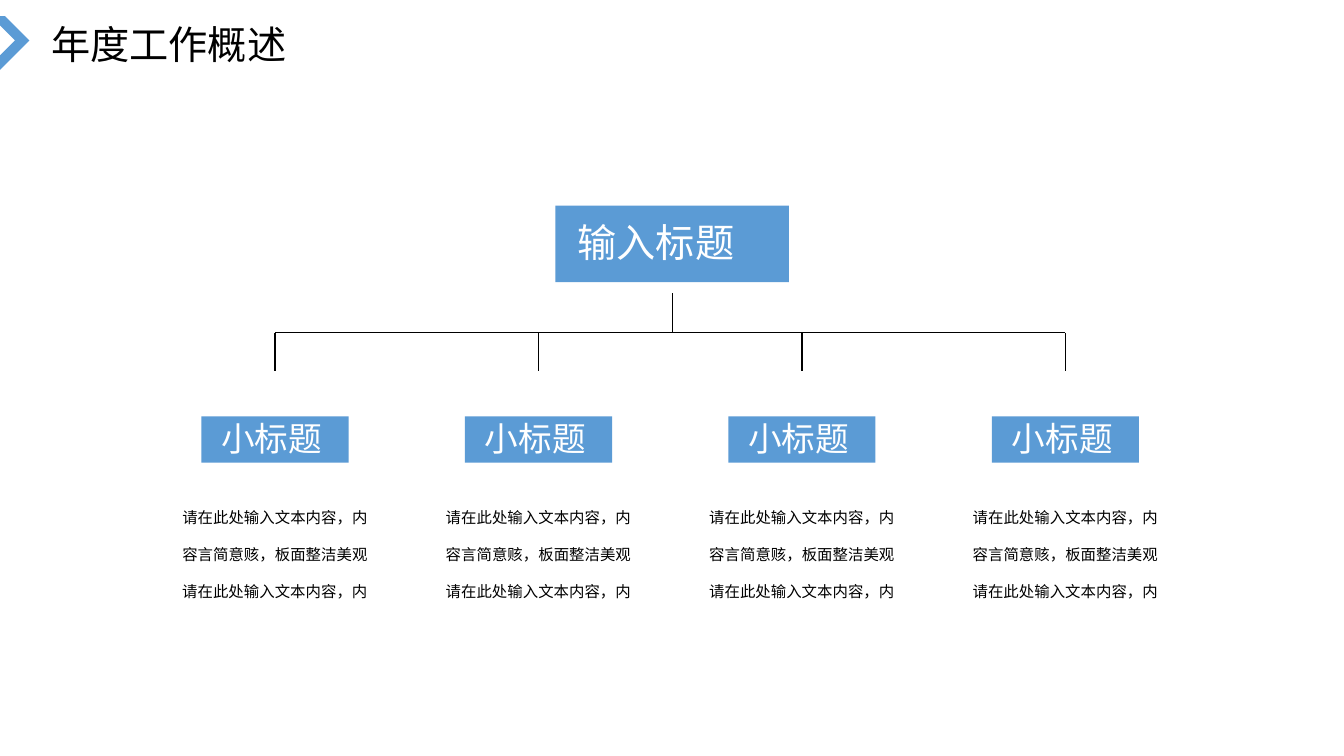
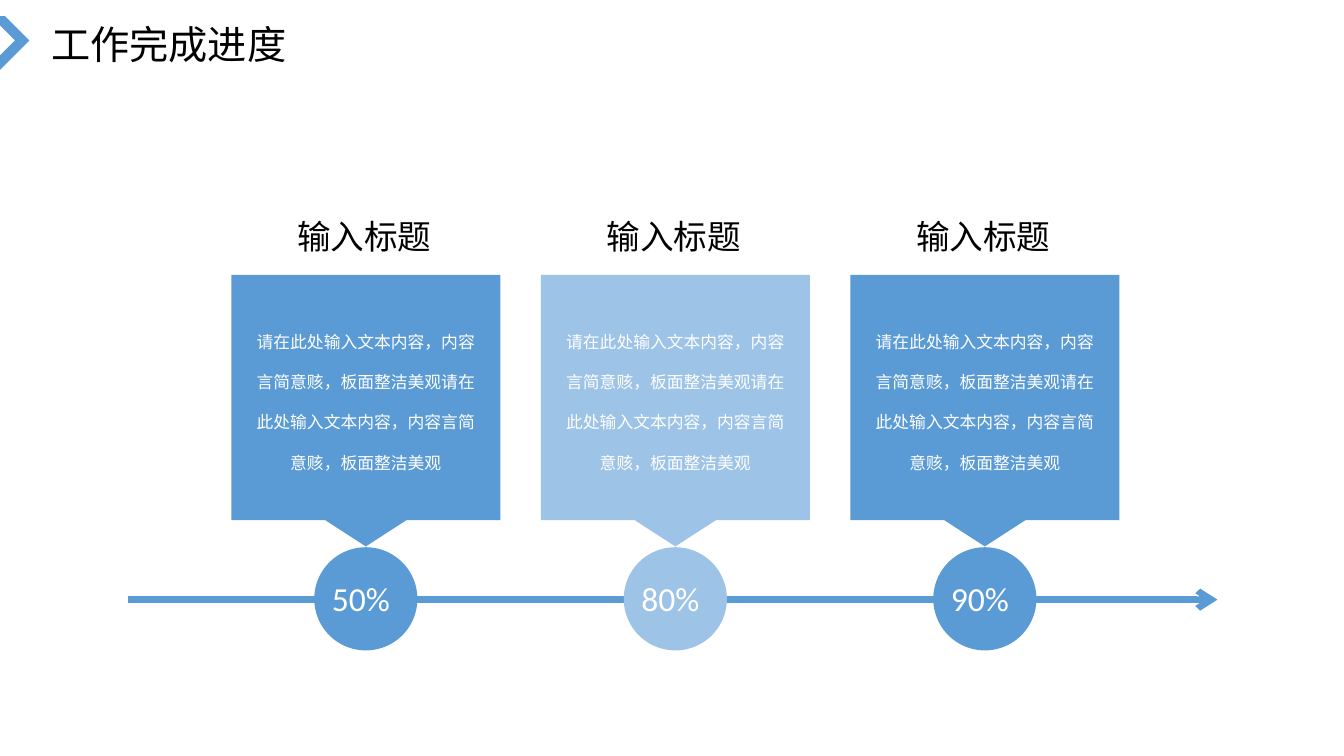
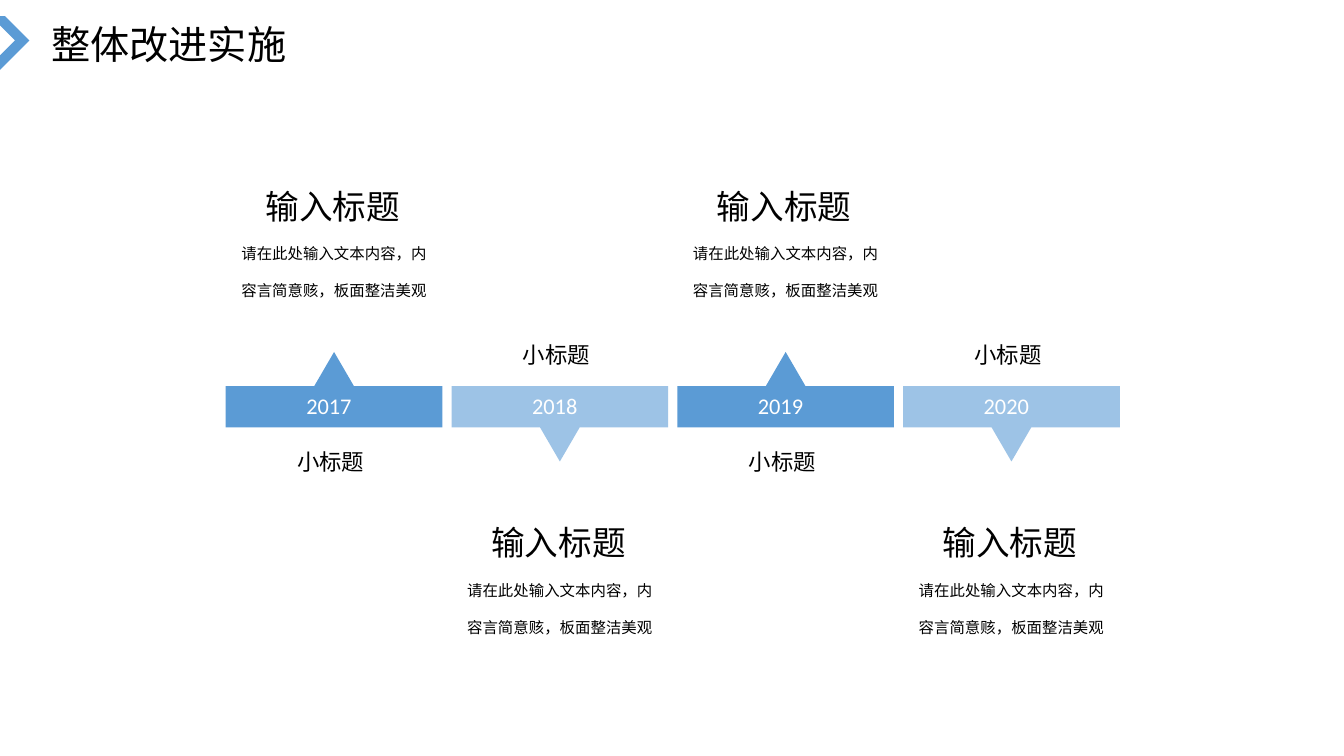
from dataclasses import dataclass

from pptx import Presentation, util as u
from pptx.dml.color import RGBColor
from pptx.enum import shapes, text
from pptx.oxml.ns import qn
from lxml import etree


@dataclass(frozen=True)
class Theme:
    font: str = "Calibri"
    blue: RGBColor = RGBColor(0x5B, 0x9B, 0xD5)
    pale: RGBColor = RGBColor(0x9D, 0xC3, 0xE6)
    ink: RGBColor = RGBColor(0, 0, 0)
    white: RGBColor = RGBColor(255, 255, 255)
    title: int = 28
    heading: int = 24
    label: int = 16
    body: int = 12
    small: int = 11


theme = Theme()
LEFT, CENTER, JUSTIFY = (
    text.PP_ALIGN.LEFT, text.PP_ALIGN.CENTER, text.PP_ALIGN.JUSTIFY)
STRAIGHT = shapes.MSO_CONNECTOR.STRAIGHT


def write(slide, words, axis, top, width, height, size, color, align=JUSTIFY, spacing=1):
    box = slide.shapes.add_textbox(
        u.Cm(axis - width / 2), u.Cm(top), u.Cm(width), u.Cm(height))
    frame = box.text_frame
    frame.word_wrap = True
    frame.auto_size = text.MSO_AUTO_SIZE.SHAPE_TO_FIT_TEXT
    frame.text = words
    paragraph = frame.paragraphs[0]
    paragraph.alignment = align
    paragraph.line_spacing = float(spacing)
    font = paragraph.runs[0].font
    font.name = theme.font
    font.size = u.Pt(size)
    font.color.rgb = color


def outline(slide, points, color):
    start, *rest = [(u.Cm(x), u.Cm(y)) for x, y in points]
    builder = slide.shapes.build_freeform(*start)
    builder.add_line_segments(rest, close=True)
    figure = builder.convert_to_shape()
    figure.fill.solid()
    figure.fill.fore_color.rgb = color
    figure.line.fill.background()


deck = Presentation()
deck.slide_width, deck.slide_height = u.Cm(33.87), u.Cm(19.05)

chevron = [(0, 0.41), (0.13, 0.41), (0.74, 1.02), (0, 1.76),
           (0, 1.4), (0.38, 1.02), (0, 0.64)]
slides = []
for title in ("年度工作概述", "工作完成进度", "整体改进实施"):
    slide = deck.slides.add_slide(deck.slide_layouts[6])
    outline(slide, chevron, theme.blue)
    write(slide, title, 4.69, 0.38, 7.29, 1.45, theme.title, theme.ink)
    slides.append(slide)
overview, progress, roadmap = slides

sentence = "请在此处输入文本内容，内容言简意赅，板面整洁美观"

branch_axes = [6.93 + 6.64 * i for i in range(4)]
trunk_axis, bus_y = 16.94, 8.38
links = [(trunk_axis, 7.39, trunk_axis, bus_y),
         (branch_axes[0], bus_y, branch_axes[-1], bus_y)]
links += [(axis, bus_y, axis, 9.35) for axis in branch_axes]
for ends in links:
    link = overview.shapes.add_connector(STRAIGHT, *map(u.Cm, ends))
    link.line.color.rgb = theme.ink
    link.line.width = u.Pt(1)

plates = [(trunk_axis, 5.18, 5.89, 1.93)]
plates += [(axis, 10.49, 3.71, 1.17) for axis in branch_axes]
for axis, top, width, height in plates:
    plate = overview.shapes.add_shape(
        shapes.MSO_SHAPE.RECTANGLE,
        u.Cm(axis - width / 2), u.Cm(top), u.Cm(width), u.Cm(height))
    plate.fill.solid()
    plate.fill.fore_color.rgb = theme.blue
    plate.line.fill.background()

write(overview, "输入标题", trunk_axis, 5.38, 5.26, 1.45, theme.title, theme.white)
for axis in branch_axes:
    write(overview, "小标题", axis, 10.41, 3.2, 1.27, theme.heading, theme.white)
    write(overview, sentence + "请在此处输入文本内容，内", axis, 12.22, 5.54, 3.07,
          theme.small, theme.ink, CENTER, 2)

timeline = progress.shapes.add_connector(
    STRAIGHT, u.Cm(3.23), u.Cm(15.11), u.Cm(30.68), u.Cm(15.11))
timeline.line.color.rgb = theme.blue
timeline.line.width = u.Pt(4.5)
etree.SubElement(timeline.line._get_or_add_ln(), qn("a:tailEnd"), type="arrow")

stages = [("50%", theme.blue), ("80%", theme.pale), ("90%", theme.blue)]
for i, (share, color) in enumerate(stages):
    axis = 9.22 + 7.8 * i
    left, right = axis - 3.39, axis + 3.39
    outline(progress, [(left, 6.93), (left, 13.11), (axis - 1.02, 13.11), (axis, 13.77),
                       (axis + 1.02, 13.11), (right, 13.11), (right, 6.93)], color)
    write(progress, sentence * 2, axis, 7.72, 6.15, 4.5,
          theme.body, theme.white, CENTER, 2)
    milestone = progress.shapes.add_shape(
        shapes.MSO_SHAPE.OVAL, u.Cm(axis - 1.3), u.Cm(13.79), u.Cm(2.6), u.Cm(2.6))
    milestone.fill.solid()
    milestone.fill.fore_color.rgb = color
    milestone.line.fill.background()
    write(progress, share, axis, 14.45, 2.21, 1.27, theme.heading, theme.white)
    write(progress, "输入标题", axis, 5.31, 3.96, 1.27, theme.heading, theme.ink, LEFT)

band_y = 10.25
for i, year in enumerate(("2017", "2018", "2019", "2020")):
    axis = 8.42 + 5.69 * i
    left, right = axis - 2.73, axis + 2.73
    if i % 2 == 0:
        side, color, heading_top, label_top = -1, theme.blue, 4.55, 11.18
    else:
        side, color, heading_top, label_top = 1, theme.pale, 13.03, 8.48
    flat, edge, tip = (band_y + side * reach for reach in (-0.52, 0.52, 1.38))
    outline(roadmap, [(left, flat), (right, flat), (right, edge), (axis + 0.5, edge),
                      (axis, tip), (axis - 0.5, edge), (left, edge)], color)
    write(roadmap, year, axis, 9.75, 1.9, 0.94, theme.label, theme.white)
    write(roadmap, "小标题", axis, label_top, 2.36, 0.94, theme.label, theme.ink)
    write(roadmap, "输入标题", axis, heading_top, 3.96, 1.27,
          theme.heading, theme.ink, LEFT)
    write(roadmap, sentence, axis, heading_top + 1.02, 5.54, 2.13,
          theme.small, theme.ink, CENTER, 2)

for slide in slides:
    for part in slide.shapes:
        if part.shape_type == shapes.MSO_SHAPE_TYPE.LINE:
            etree.SubElement(part._element.spPr, qn("a:effectLst"))
        else:
            part.shadow.inherit = False

deck.save("out.pptx")
